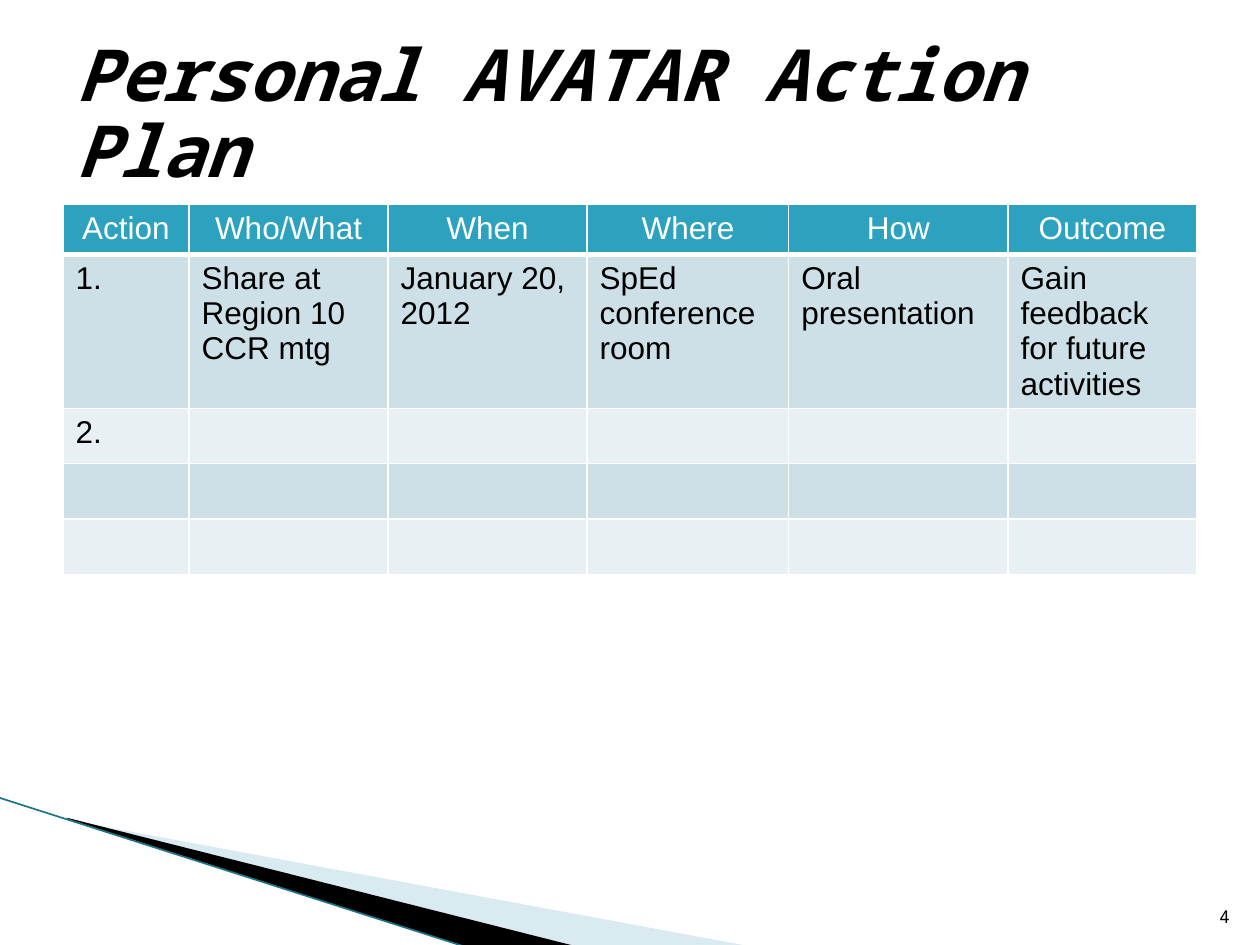
from lxml.etree import SubElement
from pptx import Presentation
from pptx.dml.color import RGBColor
from pptx.enum.shapes import MSO_CONNECTOR
from pptx.enum.text import MSO_ANCHOR as ANCHOR, MSO_AUTO_SIZE as AUTO, PP_ALIGN as ALIGN
from pptx.oxml.ns import qn
from pptx.util import Inches, Pt

COLORS = {"black": "000000", "white": "FFFFFF", "header": "2DA2BF",
          "band_dark": "CDE0E8", "band_light": "E8F0F4",
          "wedge": "A0CBDC", "edge": "1B7587"}
SANS, MONO = "Arial", "Noto Sans Mono"

TITLE = "Personal AVATAR Action Plan"
PAGE_NUMBER = "4"
ROWS = [
    ["Action", "Who/What", "When", "Where", "How", "Outcome"],
    ["1.", "Share at Region 10 CCR mtg", "January 20, 2012",
     "SpEd\nconference room", "Oral presentation",
     "Gain feedback for future activities"],
    ["2.", "", "", "", "", ""],
    [""] * 6,
    [""] * 6,
]
COL_WIDTHS = [1, 1.58, 1.58, 1.6, 1.74, 1.5]
ROW_HEIGHTS = [0.4, 1.22, 0.44, 0.44, 0.44]

# Corner wedges: points, colour, opacity in percent
WEDGES = [
    ([(0.55, 6.51), (5.95, 7.51), (4.56, 7.51), (0.55, 6.5)], "wedge", 40),
    ([(0.53, 6.49), (4.57, 7.51), (3.72, 7.52), (0.54, 6.5)], "black", 100),
]
EDGE = (-0.01, 6.33, 3.71, 7.52)


def rgb(name):
    return RGBColor.from_string(COLORS[name])


def set_font(font, color, **formats):
    font.color.rgb = rgb(color)
    for key, value in formats.items():
        setattr(font, key, value)


def write(tf, text, align, color, **formats):
    tf.text = text
    for p in tf.paragraphs:
        p.alignment = align
        for r in p.runs:
            set_font(r.font, color, **formats)


def add_wedge(shapes, points, color, opacity):
    builder = shapes.build_freeform(*map(Inches, points[0]), scale=1.0)
    builder.add_line_segments([tuple(map(Inches, pt)) for pt in points[1:]])
    sp = builder.convert_to_shape()
    sp.shadow.inherit = False
    sp.fill.solid()
    sp.fill.fore_color.rgb = rgb(color)
    sp.line.fill.background()
    if opacity < 100:
        clr = sp.fill._xPr.find(".//" + qn("a:srgbClr"))
        SubElement(clr, qn("a:alpha"), val=str(opacity * 1000))


def set_borders(cell, bottom):
    tcPr = cell._tc.get_or_add_tcPr()
    widths = {"lnL": 1, "lnR": 1, "lnT": 1, "lnB": bottom}
    for i, (side, width) in enumerate(widths.items()):
        ln = tcPr.makeelement(qn("a:" + side), {"w": str(Pt(width))})
        fill = SubElement(ln, qn("a:solidFill"))
        SubElement(fill, qn("a:srgbClr"), val=COLORS["white"])
        tcPr.insert(i, ln)


def add_plan_table(shapes):
    table = shapes.add_table(
        len(ROWS), len(COL_WIDTHS), Inches(0.5), Inches(1.62),
        Inches(sum(COL_WIDTHS)), Inches(sum(ROW_HEIGHTS))).table
    for col, width in zip(table.columns, COL_WIDTHS):
        col.width = Inches(width)
    for i, (row, height) in enumerate(zip(table.rows, ROW_HEIGHTS)):
        row.height = Inches(height)
        head = i == 0
        band = "header" if head else "band_dark" if i % 2 else "band_light"
        for cell, text in zip(row.cells, ROWS[i]):
            cell.fill.solid()
            cell.fill.fore_color.rgb = rgb(band)
            set_borders(cell, bottom=3 if head else 1)
            write(cell.text_frame, text, ALIGN.CENTER if head else ALIGN.LEFT,
                  "white" if head else "black",
                  size=Pt(18), name=SANS, bold=False)


def main():
    prs = Presentation()
    prs.slide_width, prs.slide_height = Inches(10), Inches(7.5)
    s = prs.slides.add_slide(prs.slide_layouts[5])

    # Corner decoration
    for wedge in WEDGES:
        add_wedge(s.shapes, *wedge)
    edge = s.shapes.add_connector(MSO_CONNECTOR.STRAIGHT, *map(Inches, EDGE))
    edge.line.color.rgb = rgb("edge")
    edge.line.width = Pt(0.95)
    SubElement(edge._element.spPr, qn("a:effectLst"))

    # Action plan
    add_plan_table(s.shapes)

    # Page number
    box = s.shapes.add_textbox(*map(Inches, (9.46, 7.01, 0.4, 0.4)))
    tf = box.text_frame
    tf.word_wrap = True
    tf.vertical_anchor = ANCHOR.BOTTOM
    write(tf, PAGE_NUMBER, ALIGN.RIGHT, "black", size=Pt(10), name=MONO)

    # Title
    title = s.shapes.title
    title.left, title.top, title.width, title.height = map(
        Inches, (0.5, 0.3, 9, 1.25))
    tf = title.text_frame
    tf.auto_size = AUTO.NONE
    tf.vertical_anchor = ANCHOR.MIDDLE
    write(tf, TITLE, ALIGN.LEFT, "black",
          size=Pt(41), name=MONO, bold=True, italic=True)
    tf.paragraphs[0].line_spacing = 0.88

    prs.save("out.pptx")


if __name__ == "__main__":
    main()
